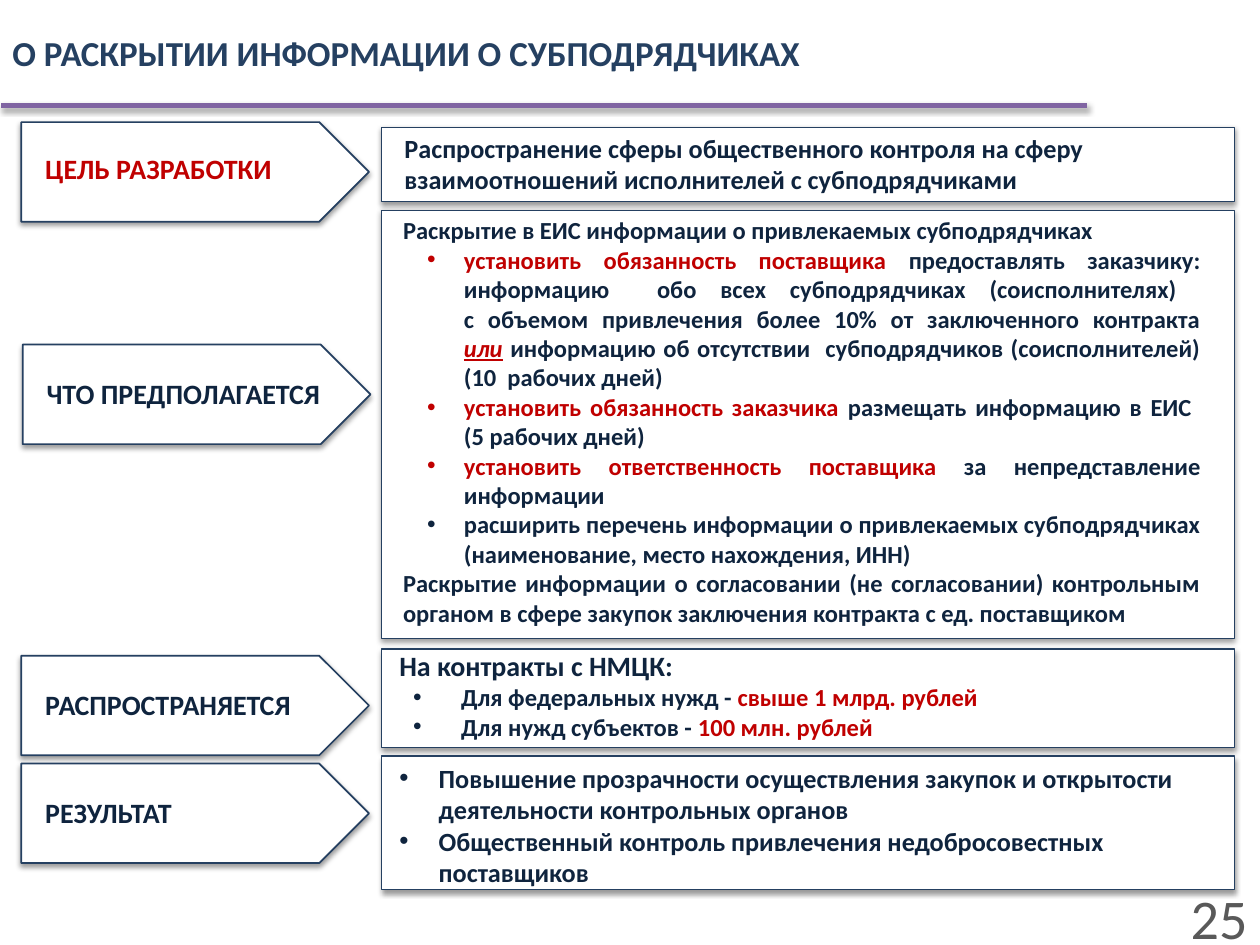
from lxml.etree import SubElement
from pptx import Presentation
from pptx.dml.color import RGBColor
from pptx.enum.shapes import MSO_CONNECTOR, MSO_SHAPE
from pptx.enum.text import MSO_ANCHOR, MSO_AUTO_SIZE, PP_ALIGN
from pptx.oxml.ns import qn
from pptx.util import Pt

C = {"navy": "254061", "text": "0F243E", "red": "C00000", "grey": "595959",
     "violet": "8064A2", "white": "FFFFFF", "black": "000000"}
FONT = "Calibri"
JUST = PP_ALIGN.JUSTIFY


def rgb(name):
    return RGBColor.from_string(C[name])


def add_shadow(s, dist, alpha):
    sp_pr = s._element.spPr
    effects = sp_pr.find(qn("a:effectLst"))
    if effects is None:
        effects = SubElement(sp_pr, qn("a:effectLst"))
    shadow = SubElement(effects, qn("a:outerShdw"), blurRad=str(Pt(3.1)),
                        dist=str(Pt(dist)), dir="5400000", rotWithShape="0")
    color = SubElement(shadow, qn("a:srgbClr"), val=C["black"])
    SubElement(color, qn("a:alpha"), val=str(alpha * 1000))


def add_panel(slide, kind, x, y, w, h, line_width):
    s = slide.shapes.add_shape(kind, Pt(x), Pt(y), Pt(w), Pt(h))
    s.fill.solid()
    s.fill.fore_color.rgb = rgb("white")
    s.line.color.rgb = rgb("navy")
    s.line.width = Pt(line_width)
    s.shadow.inherit = False
    add_shadow(s, 1.6, 38)


def add_text_box(slide, x, y, w, h, anchor=MSO_ANCHOR.TOP, grow=True):
    tf = slide.shapes.add_textbox(Pt(x), Pt(y), Pt(w), Pt(h)).text_frame
    tf.word_wrap = True
    tf.vertical_anchor = anchor
    tf.auto_size = MSO_AUTO_SIZE.SHAPE_TO_FIT_TEXT if grow else MSO_AUTO_SIZE.NONE
    return tf


def add_paragraph(tf, runs, size, align=None, bullet=None, bold=True):
    """runs: (text, colour[, emphasised]); bullet: (left margin, hanging indent)."""
    p = tf.paragraphs[0]
    if p.runs:
        p = tf.add_paragraph()
    p.alignment = align
    if bullet:
        margin, hang = bullet
        p_pr = p._p.get_or_add_pPr()
        p_pr.set("marL", str(Pt(margin)))
        p_pr.set("indent", str(-Pt(hang)))
        SubElement(p_pr, qn("a:buFont"), typeface="Arial")
        SubElement(p_pr, qn("a:buChar"), char="•")
    for text, color, *emphasis in runs:
        for i, part in enumerate(text.split("\n")):
            if i:
                p.add_line_break()
            if not part:
                continue
            r = p.add_run()
            r.text = part
            r.font.name = FONT
            r.font.size = Pt(size)
            r.font.bold = bold
            r.font.color.rgb = rgb(color)
            if emphasis:
                r.font.italic = r.font.underline = True
    # Line breaks take the text size too, so that spacing stays even
    for br in p._p.findall(qn("a:br")):
        SubElement(br, qn("a:rPr"), sz=str(size * 100))


def add_header(slide, x, y, w, h):
    tf = add_text_box(slide, x, y, w, h, MSO_ANCHOR.MIDDLE, grow=False)
    add_paragraph(tf, [("О РАСКРЫТИИ ИНФОРМАЦИИ О СУБПОДРЯДЧИКАХ", "navy")], 20)
    rule = slide.shapes.add_connector(MSO_CONNECTOR.STRAIGHT, Pt(x + 0.7),
                                      Pt(y + h + 0.6), Pt(x + w), Pt(y + h + 0.6))
    rule.line.color.rgb = rgb("violet")
    rule.line.width = Pt(3)
    add_shadow(rule, 1.8, 35)


def add_page_number(slide, x, y, w, h):
    tf = add_text_box(slide, x, y, w, h, MSO_ANCHOR.MIDDLE, grow=False)
    add_paragraph(tf, [("25", "grey")], 32, PP_ALIGN.RIGHT, bold=False)


def add_arrow_label(slide, x, y, text, color="text", text_dy=14.6):
    add_panel(slide, MSO_SHAPE.PENTAGON, x, y, 198.7, 56.9, 1)
    tf = add_text_box(slide, x + 6.6, y + text_dy, 175, 26.6)
    add_paragraph(tf, [(text, color)], 16, JUST)


def add_content(slide, y, h, inset, text_h, paragraphs):
    """inset: offset of the text from the frame; paragraphs: add_paragraph arguments."""
    x, w = 218.2, 487.4
    dx, dy = inset
    add_panel(slide, MSO_SHAPE.RECTANGLE, x, y, w, h, 0.75)
    tf = add_text_box(slide, x + dx, y + dy, 470, text_h)
    for args in paragraphs:
        add_paragraph(tf, *args)


DUTY = (34.8, 21)
LIMIT = (35.3, 27.4)
RESULT = (22.5, 22.5)

PURPOSE_TEXT = [
    ([("Распространение сферы общественного контроля на сферу  "
       "взаимоотношений исполнителей с субподрядчиками", "text")], 15),
]
PROPOSAL_TEXT = [
    ([("Раскрытие в ЕИС информации о привлекаемых субподрядчиках", "text")], 14),
    ([("установить обязанность поставщика ", "red"),
      ("предоставлять заказчику:\n"
       "информацию  обо всех субподрядчиках (соисполнителях) \n"
       "с объемом привлечения более 10% от заключенного контракта\n", "text"),
      ("или", "red", True), (" ", "red"),
      ("информацию об отсутствии  субподрядчиков (соисполнителей) "
       "(10  рабочих дней)", "text")], 14, JUST, DUTY),
    ([("установить обязанность заказчика ", "red"),
      ("размещать информацию в ЕИС \n(5 рабочих дней)", "text")], 14, JUST, DUTY),
    ([("установить ответственность поставщика ", "red"),
      ("за непредставление\nинформации", "text")], 14, JUST, DUTY),
    ([("расширить перечень информации о привлекаемых субподрядчиках "
       "(наименование, место нахождения, ИНН)", "text")], 14, JUST, DUTY),
    ([("Раскрытие информации о согласовании (не согласовании) контрольным "
       "органом в сфере закупок заключения контракта с ед. поставщиком",
       "text")], 14, JUST),
]
SCOPE_TEXT = [
    ([("На контракты с НМЦК:", "text")], 16),
    ([("Для федеральных нужд - ", "text"), ("свыше 1 млрд. рублей", "red")],
     14, None, LIMIT),
    ([("Для нужд субъектов - ", "text"), ("100 млн. рублей", "red")],
     14, None, LIMIT),
]
RESULT_TEXT = [
    ([("Повышение прозрачности осуществления закупок и открытости "
       "деятельности контрольных органов", "text")], 15, None, RESULT),
    ([("Общественный контроль привлечения недобросовестных поставщиков",
       "text")], 15, None, RESULT),
]


def main():
    prs = Presentation()
    prs.slide_width, prs.slide_height = Pt(720), Pt(540)
    slide = prs.slides.add_slide(prs.slide_layouts[6])

    add_header(slide, 0, 0, 621.4, 59.8)
    add_page_number(slide, 672.5, 507.6, 47.5, 32.4)

    add_arrow_label(slide, 12.2, 69.8, "ЦЕЛЬ РАЗРАБОТКИ", "red", 13)
    add_arrow_label(slide, 13, 196.9, "ЧТО ПРЕДПОЛАГАЕТСЯ")
    add_arrow_label(slide, 12.2, 374.7, "РАСПРОСТРАНЯЕТСЯ")
    add_arrow_label(slide, 12.2, 436.3, "РЕЗУЛЬТАТ")

    add_content(slide, 72.7, 42.5, (5.8, -0.7), 43.9, PURPOSE_TEXT)
    add_content(slide, 120.2, 244.8, (5, -0.7), 244.8, PROPOSAL_TEXT)
    add_content(slide, 370.8, 56.2, (2.9, -3.6), 60.5, SCOPE_TEXT)
    add_content(slide, 432, 76.3, (2.9, 0), 79.9, RESULT_TEXT)
    prs.save("out.pptx")


if __name__ == "__main__":
    main()
